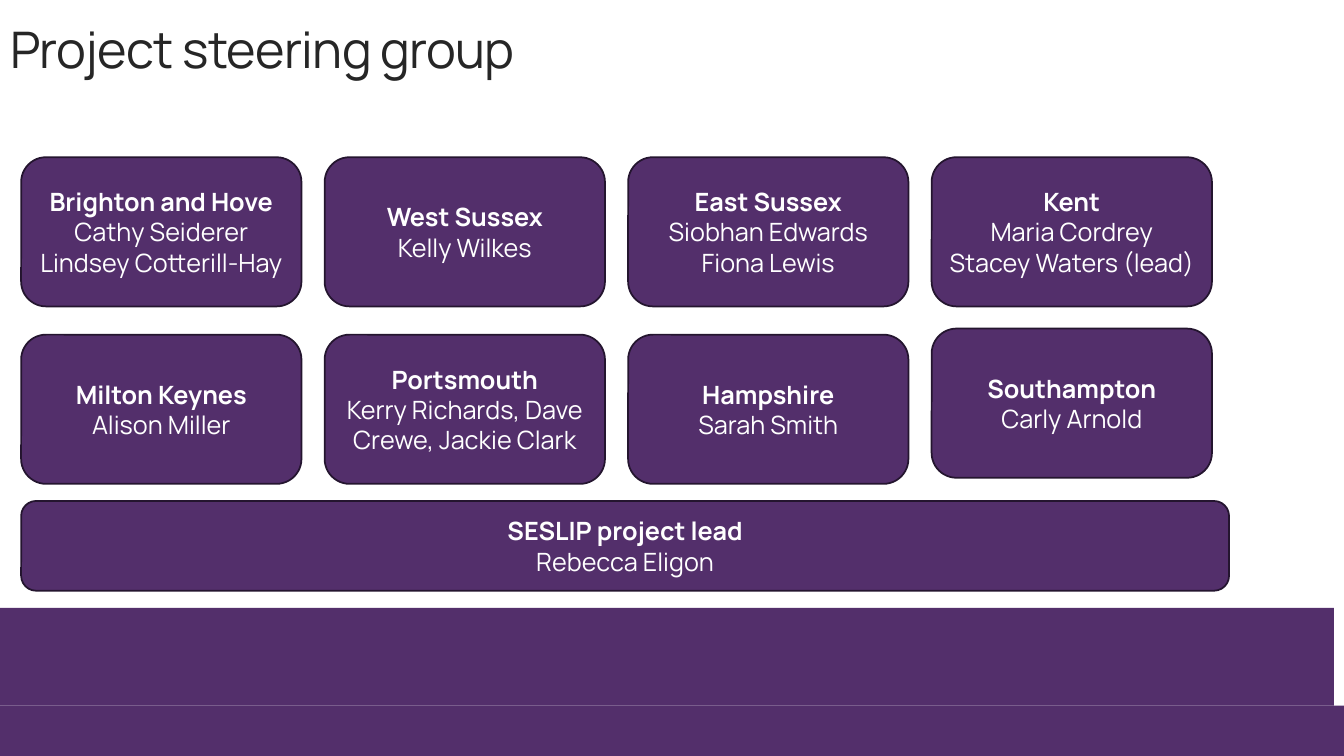
from dataclasses import dataclass

from pptx import Presentation
from pptx.dml.color import RGBColor
from pptx.enum.shapes import MSO_SHAPE
from pptx.enum.text import MSO_ANCHOR, MSO_AUTO_SIZE, PP_ALIGN
from pptx.util import Inches, Pt

TITLE = "Project steering group"
MEMBER_ROWS = [
    [
        ("Brighton and Hove", ["Cathy Seiderer", "Lindsey Cotterill-Hay"]),
        ("West Sussex", ["Kelly Wilkes"]),
        ("East Sussex", ["Siobhan Edwards", "Fiona Lewis"]),
        ("Kent", ["Maria Cordrey", "Stacey Waters (lead)"]),
    ],
    [
        ("Milton Keynes", ["Alison Miller"]),
        ("Portsmouth", ["Kerry Richards, Dave Crewe, Jackie Clark"]),
        ("Hampshire", ["Sarah Smith"]),
        ("Southampton", ["Carly Arnold"]),
    ],
]
PROJECT_LEAD = ("SESLIP project lead", ["Rebecca Eligon"])
FOOTER_BANDS = [(0, 7, 13.33, 0.5), (0, 6.03, 13.23, 0.97)]

GRID_LEFT, GRID_TOP = 0.21, 1.56
COLUMN_STEP, ROW_STEP = 3.01, 1.76
CARD_WIDTH, CARD_HEIGHT = 2.78, 1.48
RAISED_CARDS = {"Southampton": 0.06}
LEAD_BOX = (GRID_LEFT, 4.97, 11.98, 0.89)


@dataclass(frozen=True)
class Theme:
    font: str = "Manrope"
    purple: RGBColor = RGBColor(0x53, 0x2F, 0x6B)
    outline: RGBColor = RGBColor(0x24, 0x15, 0x2F)
    title_color: RGBColor = RGBColor(0x26, 0x26, 0x26)
    card_text: RGBColor = RGBColor(0xFF, 0xFF, 0xFF)
    title_size: Pt = Pt(36)
    card_size: Pt = Pt(18)
    outline_width: Pt = Pt(1.25)


THEME = Theme()


def add_run(paragraph, text, size, color, bold=False):
    run = paragraph.add_run()
    run.text = text
    run.font.name = THEME.font
    run.font.size = size
    run.font.bold = bold
    run.font.color.rgb = color
    return run


def add_purple_shape(slide, kind, box):
    shape = slide.shapes.add_shape(kind, *map(Inches, box))
    shape.shadow.inherit = False
    shape.fill.solid()
    shape.fill.fore_color.rgb = THEME.purple
    shape.line.fill.background()
    return shape


def add_card(slide, box, heading, names):
    card = add_purple_shape(slide, MSO_SHAPE.ROUNDED_RECTANGLE, box)
    card.line.color.rgb = THEME.outline
    card.line.width = THEME.outline_width
    frame = card.text_frame
    frame.word_wrap = True
    frame.vertical_anchor = MSO_ANCHOR.MIDDLE
    for index, text in enumerate([heading, *names]):
        paragraph = frame.add_paragraph() if index else frame.paragraphs[0]
        paragraph.alignment = PP_ALIGN.CENTER
        add_run(paragraph, text, THEME.card_size, THEME.card_text, bold=index == 0)


def set_title(slide):
    title = slide.shapes.title
    title.left, title.top, title.width, title.height = map(
        Inches, (0, -1.2, 13.33, 2.03)
    )
    frame = title.text_frame
    frame.word_wrap = True
    frame.auto_size = MSO_AUTO_SIZE.NONE
    frame.vertical_anchor = MSO_ANCHOR.BOTTOM
    paragraph = frame.paragraphs[0]
    paragraph.alignment = PP_ALIGN.LEFT
    paragraph.line_spacing = 0.85
    run = add_run(paragraph, TITLE, THEME.title_size, THEME.title_color)
    run.font._element.set("spc", "-50")


def main():
    presentation = Presentation()
    presentation.slide_width = Inches(13.33)
    presentation.slide_height = Inches(7.5)
    slide = presentation.slides.add_slide(presentation.slide_layouts[5])

    for band in FOOTER_BANDS:
        add_purple_shape(slide, MSO_SHAPE.RECTANGLE, band)
    set_title(slide)
    for row, members in enumerate(MEMBER_ROWS):
        for column, (area, names) in enumerate(members):
            left = GRID_LEFT + column * COLUMN_STEP
            top = GRID_TOP + row * ROW_STEP - RAISED_CARDS.get(area, 0)
            add_card(slide, (left, top, CARD_WIDTH, CARD_HEIGHT), area, names)
    add_card(slide, LEAD_BOX, *PROJECT_LEAD)

    presentation.save("out.pptx")


if __name__ == "__main__":
    main()
